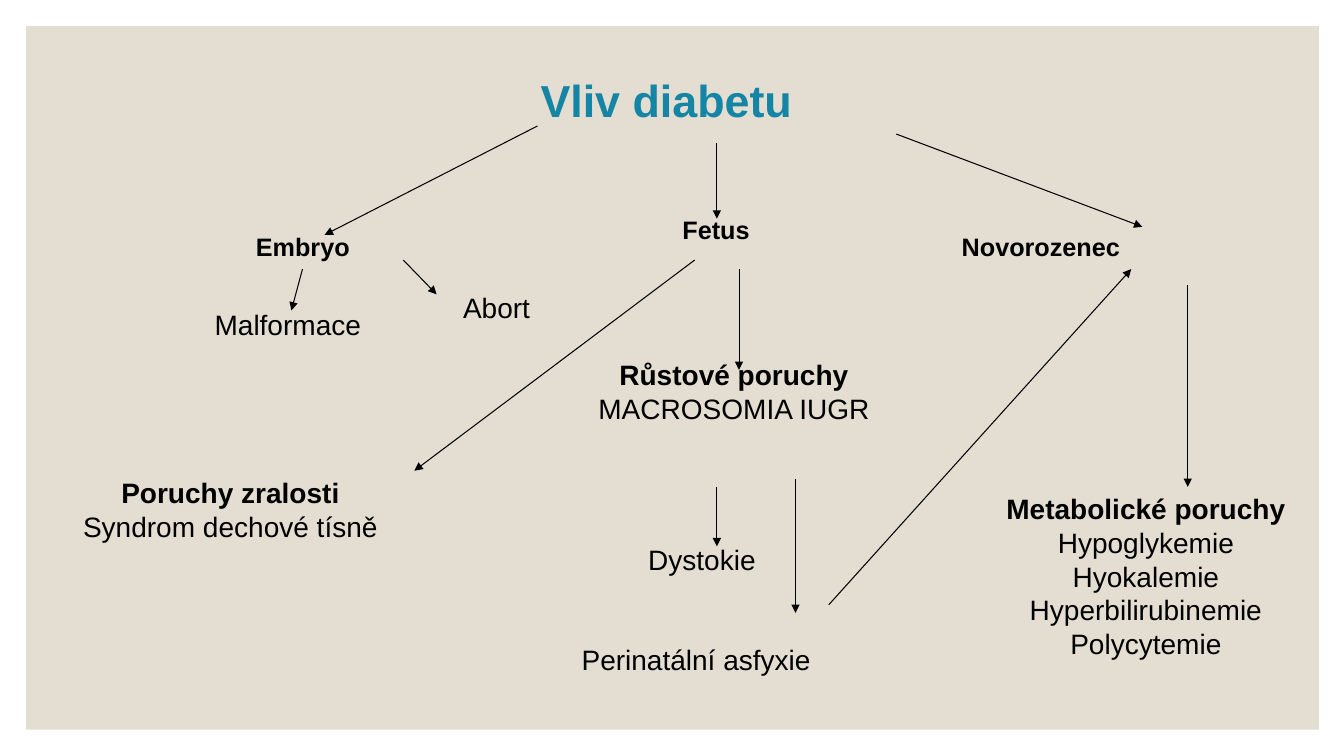
from lxml import etree
from pptx import Presentation
from pptx.dml.color import RGBColor
from pptx.enum.shapes import MSO_CONNECTOR, MSO_SHAPE
from pptx.enum.text import MSO_AUTO_SIZE, PP_ALIGN
from pptx.oxml.ns import qn
from pptx.util import Inches, Pt

STRAIGHT = MSO_CONNECTOR.STRAIGHT
RECTANGLE = MSO_SHAPE.RECTANGLE
GROW = MSO_AUTO_SIZE.SHAPE_TO_FIT_TEXT
LEFT, CENTER = PP_ALIGN.LEFT, PP_ALIGN.CENTER

BLACK, TEAL, SAND = "000000", "1485A4", "E3DED1"
TITLE = {"size": Pt(32), "bold": True}
STAGE = {"size": Pt(18), "bold": True}
HEADING = {"size": Pt(20), "bold": True}
BODY = {"size": Pt(20), "bold": False}


def rgb(value):
    return RGBColor.from_string(value)


def add_label(s, box, paragraphs, align=CENTER, wrap=True, color=BLACK):
    sp = s.shapes.add_textbox(*map(Inches, box))
    tf = sp.text_frame
    tf.word_wrap = wrap
    tf.auto_size = GROW
    for i, runs in enumerate(paragraphs):
        p = tf.add_paragraph() if i else tf.paragraphs[0]
        p.alignment = align
        for text, style in runs:
            r = p.add_run()
            r.text = text
            r.font.name = "Arial"
            r.font.color.rgb = rgb(color)
            for name, value in style.items():
                setattr(r.font, name, value)


def add_arrows(s, left, top, arrows):
    for x1, y1, x2, y2 in arrows:
        ends = left + x1, top + y1, left + x2, top + y2
        line = s.shapes.add_connector(STRAIGHT, *map(Inches, ends))
        line.line.color.rgb = rgb(BLACK)
        line.line.width = Pt(0.75)
        etree.SubElement(line.line._get_or_add_ln(), qn("a:tailEnd"), type="triangle")
        etree.SubElement(line._element.spPr, qn("a:effectLst"))


def add_background(s, box):
    sp = s.shapes.add_shape(RECTANGLE, *map(Inches, box))
    sp.shadow.inherit = False
    sp.fill.solid()
    sp.fill.fore_color.rgb = rgb(SAND)
    sp.line.fill.background()


def add_title(s, left, top):
    add_label(s, (left + 0.67, top, 5.44, 0.63), [[("Vliv diabetu", TITLE)]], color=TEAL)
    add_arrows(s, left, top, [
        (2.11, 0.58, 0, 1.66),
        (3.89, 0.75, 3.89, 1.5),
        (5.67, 0.66, 8.11, 1.58),
    ])


def add_embryo(s, left, top):
    add_label(s, (left + 0.42, top, 1.14, 0.4), [[("Embryo", STAGE)]], LEFT, False)
    add_label(s, (left, top + 0.75, 1.67, 0.44), [[("Malformace", BODY)]], wrap=False)
    add_label(s, (left + 2.47, top + 0.58, 0.87, 0.44), [[("Abort", BODY)]], wrap=False)
    add_arrows(s, left, top, [
        (0.98, 0.42, 0.87, 0.83),
        (1.98, 0.33, 2.31, 0.67),
    ])


def add_fetus(s, left, top):
    add_label(s, (left + 6.23, top, 0.88, 0.4), [[("Fetus", STAGE)]], LEFT, False)
    add_label(s, (left, top + 2.59, 3.69, 0.77),
              [[("Poruchy zralosti", HEADING)], [("Syndrom dechové tísně", BODY)]])
    add_label(s, (left + 5.34, top + 1.42, 3, 0.77),
              [[("Růstové poruchy", HEADING), (" MACROSOMIA IUGR", BODY)]])
    add_label(s, (left + 5.89, top + 3.25, 1.89, 0.43), [[("Dystokie", BODY)]], LEFT)
    add_label(s, (left + 5.23, top + 4.25, 3.33, 0.43), [[("Perinatální asfyxie", BODY)]], LEFT)
    add_arrows(s, left, top, [
        (6.45, 0.5, 3.67, 2.59),
        (6.89, 0.59, 6.89, 1.59),
        (6.67, 2.75, 6.67, 3.34),
        (7.45, 2.67, 7.45, 4),
    ])


def add_newborn(s, left, top):
    disorders = ["Hypoglykemie", "Hyokalemie", "Hyperbilirubinemie", "Polycytemie"]
    add_label(s, (left + 1.22, top, 1.79, 0.4), [[("Novorozenec", STAGE)]], LEFT, False)
    add_label(s, (left + 1.65, top + 2.58, 2.99, 1.78),
              [[("Metabolické poruchy", HEADING)]] + [[(name, BODY)] for name in disorders],
              wrap=False)
    add_arrows(s, left, top, [
        (0, 3.75, 3, 0.42),
        (3.56, 0.58, 3.56, 2.58),
    ])


def main():
    prs = Presentation()
    prs.slide_width, prs.slide_height = Inches(13.33), Inches(7.5)
    s = prs.slides.add_slide(prs.slide_layouts[6])
    add_background(s, (0.26, 0.26, 12.82, 6.98))
    add_title(s, 3.22, 0.67)
    add_embryo(s, 2.02, 2.25)
    add_fetus(s, 0.44, 2.08)
    add_newborn(s, 8.22, 2.25)
    prs.save("out.pptx")


if __name__ == "__main__":
    main()
